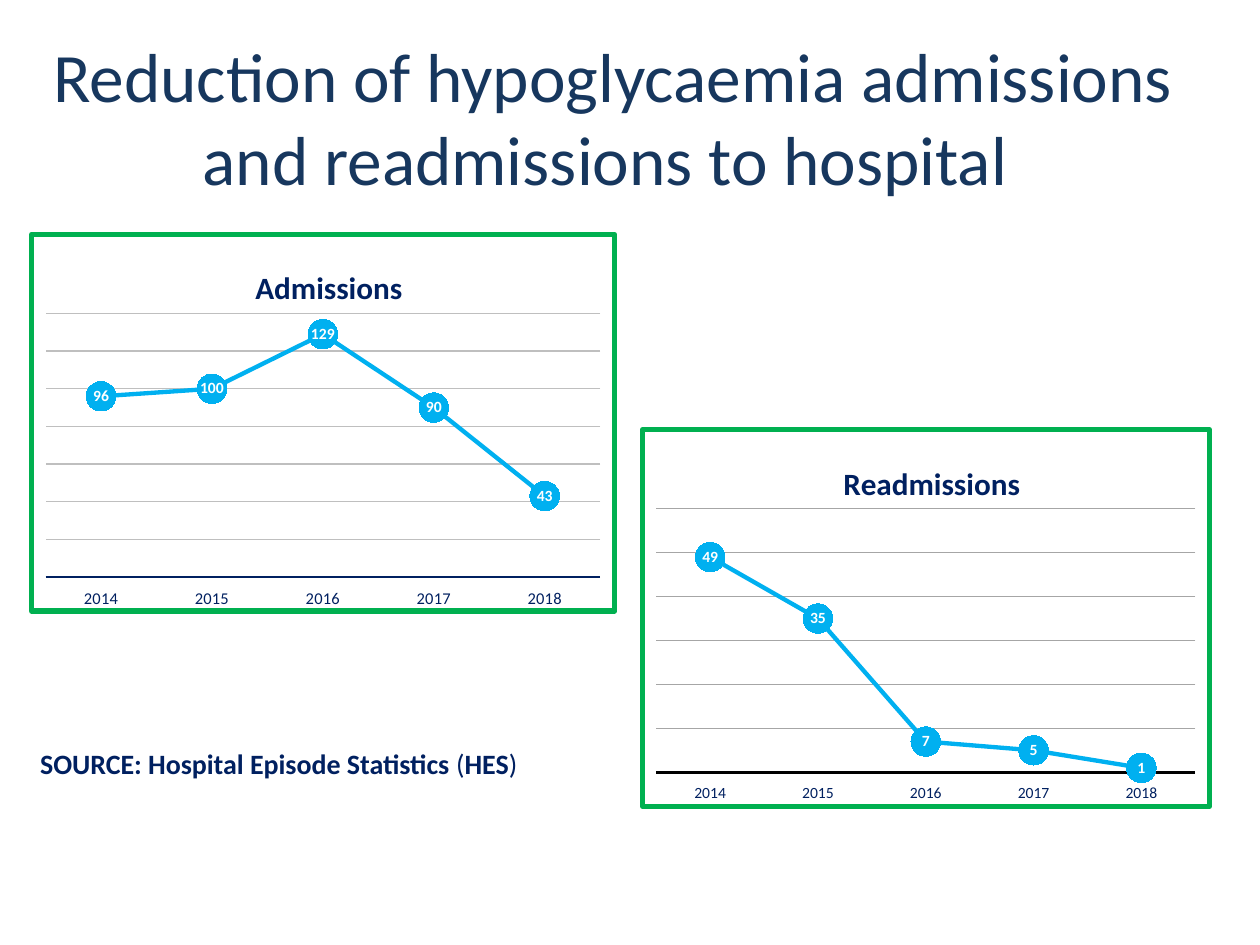
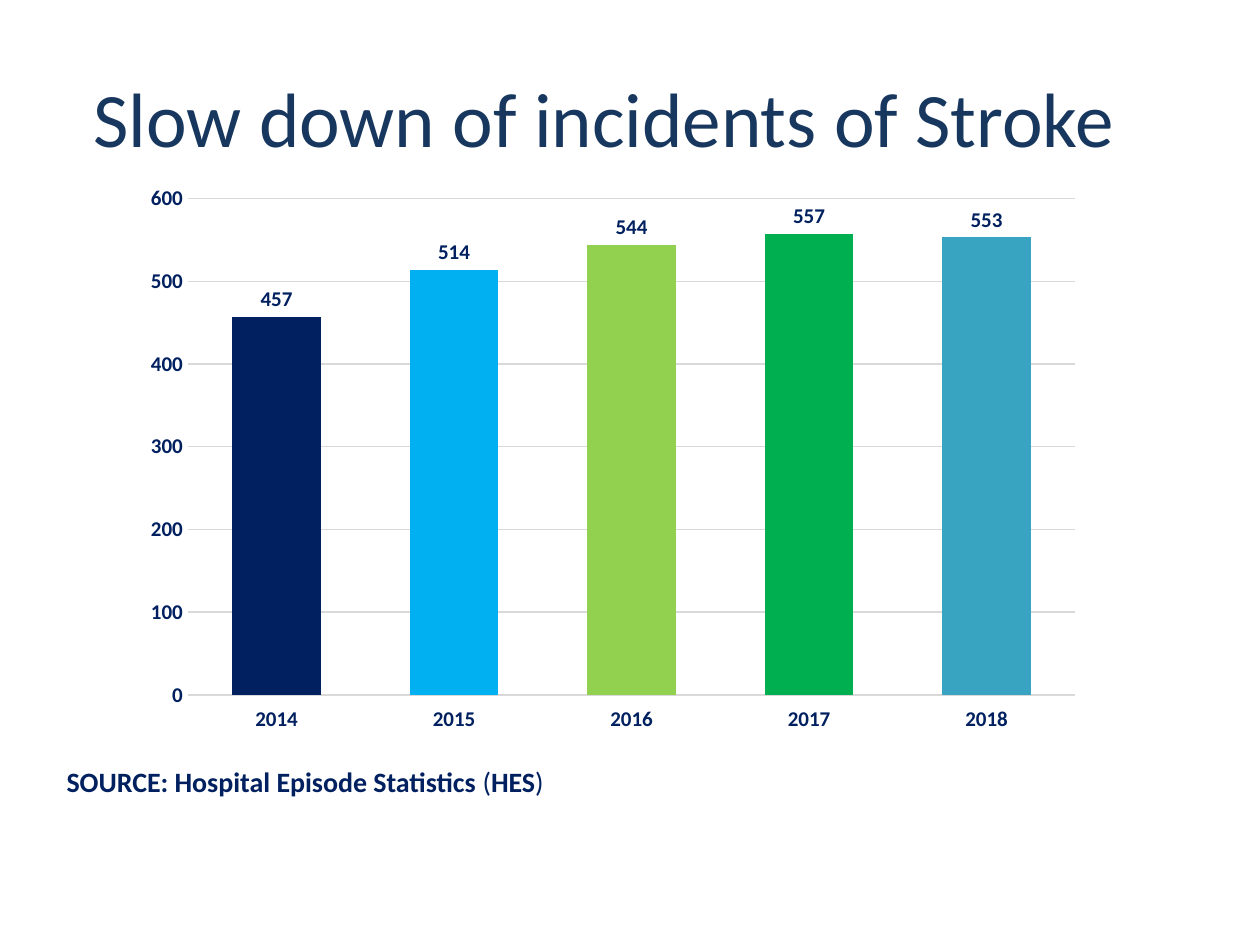
from dataclasses import dataclass

from lxml.etree import SubElement
from pptx import Presentation
from pptx.chart.data import CategoryChartData
from pptx.dml.color import RGBColor as RGB
from pptx.enum.chart import XL_CHART_TYPE as ChartType
from pptx.enum.chart import XL_LABEL_POSITION as LabelPosition
from pptx.enum.chart import XL_MARKER_STYLE as MarkerStyle
from pptx.enum.chart import XL_TICK_LABEL_POSITION as TickLabels
from pptx.enum.chart import XL_TICK_MARK as TickMark
from pptx.enum.text import MSO_ANCHOR as Anchor
from pptx.enum.text import MSO_AUTO_SIZE as AutoSize
from pptx.enum.text import PP_ALIGN as Align
from pptx.oxml import parse_xml
from pptx.oxml.ns import nsdecls, qn
from pptx.util import Inches, Pt


@dataclass(frozen=True)
class Theme:
    font: str = "Calibri"
    title: str = "17375E"
    navy: str = "002060"
    sky: str = "00B0F0"
    green: str = "00B050"
    lime: str = "92D050"
    teal: str = "38A4C1"
    white: str = "FFFFFF"
    black: str = "000000"
    pale_grey: str = "D9D9D9"
    light_grey: str = "BFBFBF"
    mid_grey: str = "A6A6A6"
    chart_title_size: float = 18
    source_size: float = 16
    bar_text_size: float = 12
    marker_text_size: float = 9


THEME = Theme()
TITLE_BOX = (0.23, 0.3, 9.27, 1.25)
YEARS = ["2014", "2015", "2016", "2017", "2018"]
SOURCE_RUNS = [
    ("SOURCE: Hospital Episode Statistics", True),
    (" (", False),
    ("HES", True),
    (")", False),
]


def style_font(font, size, color, bold=False):
    font.name = THEME.font
    font.size = Pt(size)
    font.bold = bold
    font.color.rgb = RGB.from_string(color)


def style_line(line, color, width):
    line.color.rgb = RGB.from_string(color)
    line.width = Pt(width)


def paint(fill, color):
    fill.solid()
    fill.fore_color.rgb = RGB.from_string(color)


def place_part(parent, index, **fractions):
    """Fix a chart part at fractions of the chart's width and height."""
    for layout in parent.findall(qn("c:layout")):
        parent.remove(layout)
    layout = parse_xml(f"<c:layout {nsdecls('c')}/>")
    manual = SubElement(layout, qn("c:manualLayout"))
    if "w" in fractions:
        SubElement(manual, qn("c:layoutTarget")).set("val", "inner")
    for side in ("x", "y"):
        SubElement(manual, qn(f"c:{side}Mode")).set("val", "edge")
    for name, value in fractions.items():
        SubElement(manual, qn(f"c:{name}")).set("val", str(value))
    parent.insert(index, layout)


def frame_chart(chart):
    """Give the whole chart a white ground and a green border."""
    frame = parse_xml(
        f'<c:spPr {nsdecls("c", "a")}>'
        f'<a:solidFill><a:srgbClr val="{THEME.white}"/></a:solidFill>'
        f'<a:ln w="{Pt(3)}"><a:solidFill><a:srgbClr val="{THEME.green}"/>'
        "</a:solidFill><a:round/></a:ln></c:spPr>"
    )
    chart.element.find(qn("c:chart")).addnext(frame)


def add_title(slide, text, size):
    title = slide.shapes.title
    title.left, title.top, title.width, title.height = map(Inches, TITLE_BOX)
    frame = title.text_frame
    frame.text = text
    frame.auto_size = AutoSize.NONE
    frame.vertical_anchor = Anchor.MIDDLE
    paragraph = frame.paragraphs[0]
    paragraph.alignment = Align.CENTER
    style_font(paragraph.runs[0].font, size, THEME.title)


def add_source(slide, left, top):
    box = slide.shapes.add_textbox(*map(Inches, (left, top, 4.04, 0.37)))
    frame = box.text_frame
    frame.word_wrap = False
    frame.auto_size = AutoSize.SHAPE_TO_FIT_TEXT
    for text, bold in SOURCE_RUNS:
        run = frame.paragraphs[0].add_run()
        run.text = text
        style_font(run.font, THEME.source_size, THEME.navy, bold)


def add_year_chart(slide, chart_type, box, values, top_value, step, grid, plot_area):
    """Add a one-series chart over the years with the shared settings."""
    data = CategoryChartData()
    data.categories = YEARS
    data.add_series("Series 1", values)
    chart = slide.shapes.add_chart(chart_type, *map(Inches, box), data).chart
    chart.has_legend = False
    chart.has_title = False
    style_font(chart.font, 10, THEME.black)
    chart.plots[0].vary_by_categories = False

    value_axis = chart.value_axis
    value_axis.minimum_scale = 0
    value_axis.maximum_scale = top_value
    value_axis.major_unit = step
    value_axis.has_major_gridlines = True
    style_line(value_axis.major_gridlines.format.line, grid, 0.75)
    for axis in (chart.category_axis, value_axis):
        axis.major_tick_mark = axis.minor_tick_mark = TickMark.NONE
    chart.category_axis.tick_label_position = TickLabels.LOW
    place_part(chart.element.find(".//" + qn("c:plotArea")), 0, **plot_area)
    return chart


def style_labels(plot, position, size, color):
    plot.has_data_labels = True
    labels = plot.data_labels
    labels.show_value = True
    labels.position = position
    style_font(labels.font, size, color, bold=True)


def add_line_panel(slide, chart_type, box, title, title_left, values, top_value,
                   step, grid, axis_color, axis_size):
    chart = add_year_chart(slide, chart_type, box, values, top_value, step, grid,
                           dict(x=0.024, y=0.21, w=0.951, h=0.7))
    frame_chart(chart)
    chart.has_title = True
    chart_title = chart.chart_title
    chart_title.text_frame.text = title
    run = chart_title.text_frame.paragraphs[0].runs[0]
    style_font(run.font, THEME.chart_title_size, THEME.navy, bold=True)
    place_part(chart_title.element, 1, x=title_left, y=0.07)

    chart.value_axis.visible = False
    style_font(chart.category_axis.tick_labels.font, axis_size, THEME.navy)
    style_line(chart.category_axis.format.line, axis_color, 1.5)

    series = chart.plots[0].series[0]
    series.smooth = False
    style_line(series.format.line, THEME.sky, 2.5)
    marker = series.marker
    marker.style = MarkerStyle.CIRCLE
    marker.size = 17
    paint(marker.format.fill, THEME.sky)
    style_line(marker.format.line, THEME.sky, 0.75)
    style_labels(chart.plots[0], LabelPosition.CENTER, THEME.marker_text_size, THEME.white)


def add_stroke_bars(slide, box):
    chart = add_year_chart(slide, ChartType.COLUMN_CLUSTERED, box,
                           [457, 514, 544, 557, 553], 600, 100, THEME.pale_grey,
                           dict(x=0.059, y=0.042, w=0.922, h=0.885))
    for axis in (chart.category_axis, chart.value_axis):
        style_font(axis.tick_labels.font, THEME.bar_text_size, THEME.navy, bold=True)
    style_line(chart.category_axis.format.line, THEME.pale_grey, 1)
    chart.value_axis.format.line.fill.background()

    plot = chart.plots[0]
    plot.gap_width = 100
    plot.overlap = -24
    bar_colors = (THEME.navy, THEME.sky, THEME.lime, THEME.green, THEME.teal)
    for index, color in enumerate(bar_colors):
        paint(plot.series[0].points[index].format.fill, color)
    style_labels(plot, LabelPosition.OUTSIDE_END, THEME.bar_text_size, THEME.navy)


def add_titled_slide(presentation, title, size):
    slide = presentation.slides.add_slide(presentation.slide_layouts[5])
    add_title(slide, title, size)
    return slide


def build_hypoglycaemia_slide(presentation):
    slide = add_titled_slide(
        presentation,
        "Reduction of hypoglycaemia admissions and readmissions to hospital ", 39.6)
    add_line_panel(slide, ChartType.LINE_MARKERS_STACKED, (5.08, 3.39, 4.54, 3.03),
                   "Readmissions", 0.344, [49, 35, 7, 5, 1], 60, 10,
                   THEME.mid_grey, THEME.black, 9)
    add_line_panel(slide, ChartType.LINE_MARKERS, (0.23, 1.84, 4.67, 3.03),
                   "Admissions", 0.374, [96, 100, 129, 90, 43], 140, 20,
                   THEME.light_grey, THEME.navy, 9.5)
    add_source(slide, 0.22, 5.88)


def build_stroke_slide(presentation):
    slide = add_titled_slide(presentation, "Slow down of incidents of Stroke ", 44)
    add_stroke_bars(slide, (1.04, 1.39, 7.64, 4.45))
    add_source(slide, 0.43, 6.02)


def main():
    presentation = Presentation()
    presentation.slide_width = Inches(10)
    presentation.slide_height = Inches(7.5)
    build_hypoglycaemia_slide(presentation)
    build_stroke_slide(presentation)
    presentation.save("out.pptx")


if __name__ == "__main__":
    main()
